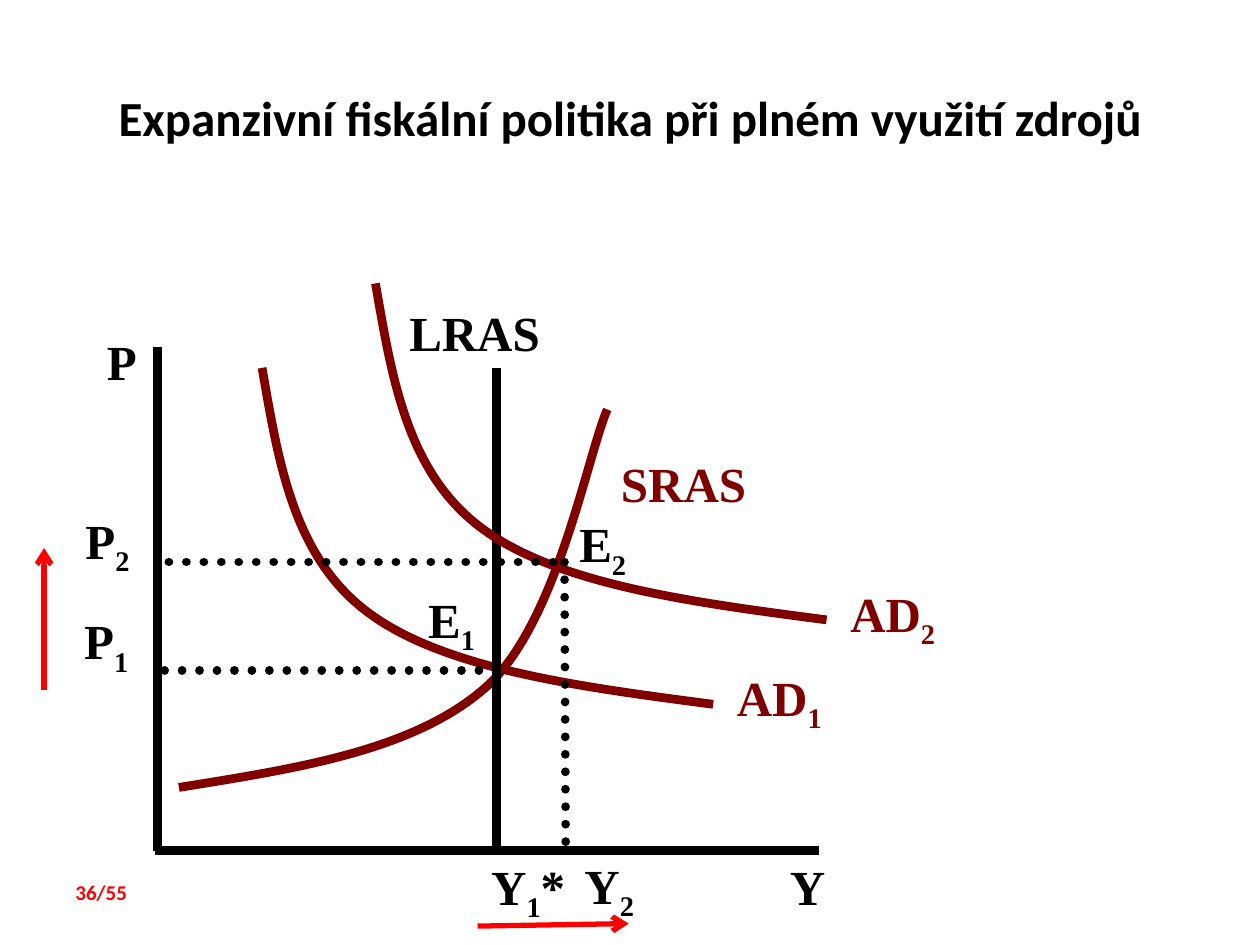
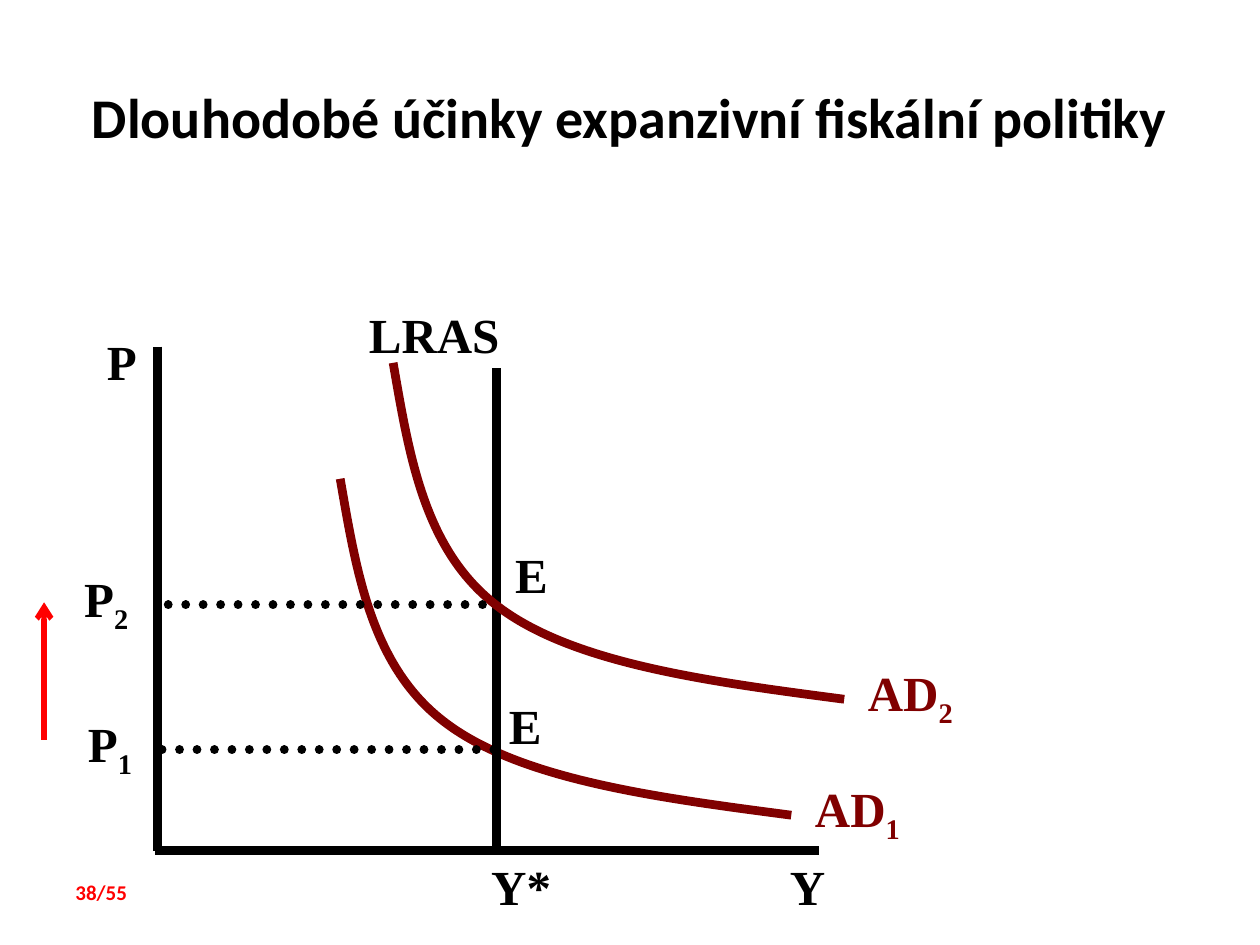
"""Build two slides of AD-AS diagrams on expansionary fiscal policy."""
from lxml import etree
from pptx import Presentation, util as u
from pptx.dml.color import RGBColor
from pptx.enum import dml, shapes, text
from pptx.oxml import ns

BLACK, MAROON, RED = "000000", "800000", "FF0000"
SERIF, SANS = "Times New Roman", "Calibri"
AD_SHAPE = [(0, 0), (0.13, 0.75), (0.25, 1.5), (0.84, 1.94), (1.44, 2.39), (2.51, 2.53), (3.58, 2.67)]
SRAS = [(1.42, 6.25), (2.35, 6.1), (3.28, 5.96), (3.85, 5.46), (4.42, 4.96), (4.66, 3.62), (4.82, 3.25)]
AXES = [((1.25, 2.75), (1.25, 6.75), 5.5), ((1.23, 6.75), (6.5, 6.75), 5)]
LRAS = ((3.94, 6.75), (3.94, 2.92))

diagrams = [
    {
        "title": "Expanzivní fiskální politika při plném využití zdrojů",
        "title_size": 28,
        "page": "36/55",
        "ad": [(2.08, 2.92), (2.98, 2.25)],
        "sras": [SRAS],
        "guides": [((3.94, 5.32), (1.23, 5.32)), ((4.39, 4.46), (1.25, 4.46)), ((4.49, 6.68), (4.48, 4.46))],
        "shifts": [((0.35, 5.48), (0.35, 4.35)), ((3.79, 7.35), (4.99, 7.33))],
        "labels": [
            ("P_1", 0.57, 4.8, 0.67, BLACK), ("P_2", 0.58, 4, 0.67, BLACK),
            ("Y_1_*", 3.8, 6.75, 0.92, BLACK), ("Y_2", 4.54, 6.74, 0.92, BLACK),
            ("E_1", 3.3, 4.63, 0.67, BLACK), ("E_2", 4.5, 4.03, 0.67, BLACK),
            ("LRAS", 3.15, 2.35, 1.5, BLACK), ("SRAS", 4.83, 3.55, 1.98, MAROON),
        ],
    },
    {
        "title": "Dlouhodobé účinky expanzivní fiskální politiky",
        "title_size": 32,
        "page": "38/55",
        "ad": [(2.7, 3.8), (3.12, 2.88)],
        "sras": [],
        "guides": [((3.92, 5.95), (1.23, 5.95)), ((3.83, 4.8), (1.25, 4.8))],
        "shifts": [((0.35, 5.87), (0.35, 4.78))],
        "labels": [
            ("P_1", 0.6, 5.61, 0.67, BLACK), ("P_2", 0.57, 4.46, 0.67, BLACK),
            ("Y*", 3.8, 6.75, 0.92, BLACK),
            ("E", 3.94, 5.47, 0.67, BLACK), ("E", 3.99, 4.27, 0.67, BLACK),
            ("LRAS", 2.83, 2.37, 1.5, BLACK),
        ],
    },
]


def write(box, wording, size=28, face=SERIF, color=BLACK, align=text.PP_ALIGN.LEFT):
    """Fill a box with bold text; every second part between underscores is a subscript."""
    box.text_frame.word_wrap = True
    paragraph = box.text_frame.paragraphs[0]
    paragraph.alignment = align
    for i, part in enumerate(wording.split("_")):
        run = paragraph.add_run()
        run.text = part
        run.font.size, run.font.name, run.font.bold = u.Pt(size), face, True
        run.font.color.rgb = RGBColor.from_string(color)
        if i % 2:
            run.font._element.set("baseline", "-25000")


def draw(slide, points, color, width=5, dotted=False, arrow=False):
    """Draw a straight line through two points, or a chain of cubic curves through more."""
    start, *others = [(u.Inches(x), u.Inches(y)) for x, y in points]
    if len(others) == 1:
        stroke = slide.shapes.add_connector(shapes.MSO_CONNECTOR.STRAIGHT, *start, *others[0])
    else:
        builder = slide.shapes.build_freeform(*start)
        builder.add_line_segments(others, close=False)
        stroke = builder.convert_to_shape()
        stroke.fill.background()
        segments = list(stroke._element.iter(ns.qn("a:lnTo")))
        for first in range(0, len(segments), 3):
            cubic = etree.SubElement(segments[first].getparent(), ns.qn("a:cubicBezTo"))
            for segment in segments[first:first + 3]:
                cubic.append(segment[0])
                segment.getparent().remove(segment)
    stroke.line.color.rgb = RGBColor.from_string(color)
    stroke.line.width = u.Pt(width)
    outline = stroke._element.spPr.find(ns.qn("a:ln"))
    if dotted:
        stroke.line.dash_style = dml.MSO_LINE.ROUND_DOT
        outline.set("cap", "rnd")
    if arrow:
        etree.SubElement(outline, ns.qn("a:tailEnd"), type="arrow")
    etree.SubElement(stroke._element.spPr, ns.qn("a:effectLst"))


deck = Presentation()
deck.slide_width, deck.slide_height = u.Inches(10), u.Inches(7.5)

for diagram in diagrams:
    slide = deck.slides.add_slide(deck.slide_layouts[5])
    title = slide.shapes.title
    title.left, title.top, title.width, title.height = map(u.Inches, (0.5, 0.3, 9, 1.25))
    title.text_frame.vertical_anchor = text.MSO_ANCHOR.MIDDLE
    write(title, diagram["title"], size=diagram["title_size"], face=SANS, align=text.PP_ALIGN.CENTER)

    for start, end, width in AXES:
        draw(slide, [start, end], BLACK, width)
    ad_1, ad_2 = [[(x + dx, y + dy) for dx, dy in AD_SHAPE] for x, y in diagram["ad"]]
    for curve in [ad_1, *diagram["sras"]]:
        draw(slide, curve, MAROON)
    price_guide, *other_guides = diagram["guides"]
    draw(slide, price_guide, BLACK, dotted=True)
    draw(slide, LRAS, BLACK)
    draw(slide, ad_2, MAROON)
    for guide in other_guides:
        draw(slide, guide, BLACK, dotted=True)
    for shift in diagram["shifts"]:
        draw(slide, shift, RED, width=3, arrow=True)

    axis_labels = [("P", 0.75, 2.58, 0.67, BLACK), ("Y", 6.17, 6.75, 0.67, BLACK)]
    ad_labels = [(f"AD_{n}", x + 3.67, y + 2.33, 1.17, MAROON)
                 for n, (x, y) in enumerate(diagram["ad"], 1)]
    for wording, x, y, width, color in axis_labels + ad_labels + diagram["labels"]:
        label = slide.shapes.add_textbox(u.Inches(x), u.Inches(y), u.Inches(width), u.Inches(0.57))
        write(label, wording, color=color)

    page = slide.shapes.add_textbox(u.Inches(0.5), u.Inches(6.93), u.Inches(0.92), u.Inches(0.3))
    write(page, diagram["page"], size=12, face=SANS, color=RED)

deck.save("out.pptx")
